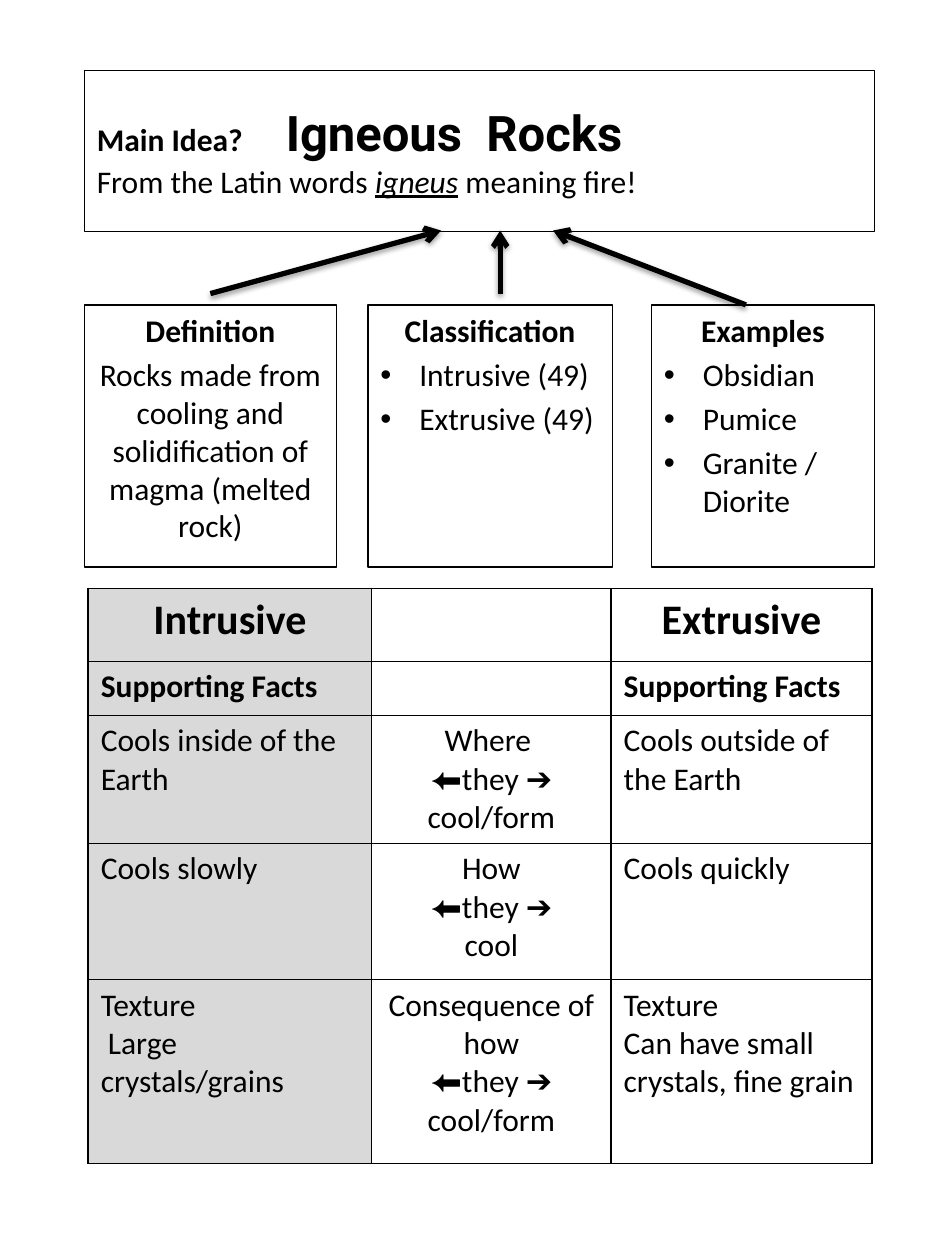
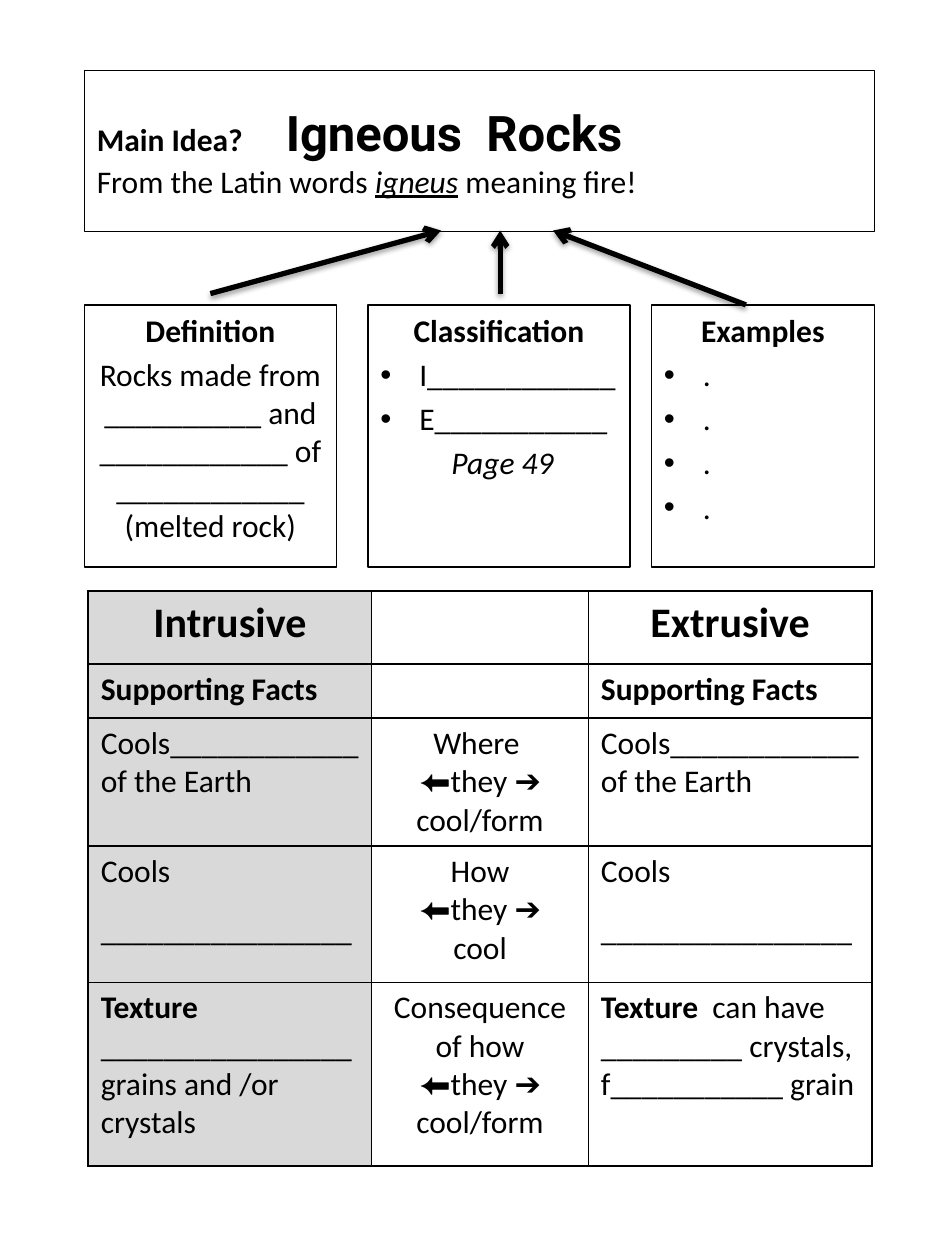
"""Build two worksheet pages about igneous rocks: the answer key and the fill-in copy."""
from lxml import etree
from pptx import Presentation
from pptx import util as u
from pptx.dml.color import RGBColor
from pptx.enum import shapes, text
from pptx.oxml import ns

PX = 9144
COLORS = {"ink": "000000", "shade": "D9D9D9"}
INK = RGBColor.from_string(COLORS["ink"])
LEFT, CENTER = text.PP_ALIGN.LEFT, text.PP_ALIGN.CENTER
STYLES = {
    "plain": {},
    "bold": {"bold": True},
    "italic": {"italic": True},
    "latin": {"italic": True, "underline": True},
    "symbol": {"name": "Arial"},
    "topic": {"name": "Roboto", "size": u.Pt(28), "bold": True},
    "heading": {"size": u.Pt(24), "bold": True},
}


def add_xml(parent, markup):
    parent.append(etree.fromstring(markup.replace(" ", f' xmlns:a="{ns.namespaces("a")["a"]}" ', 1)
                                   if " " in markup else markup))


def write(para, spans, align=LEFT, style="plain"):
    para.alignment = align
    if isinstance(spans, str):
        spans = [(spans, style)]
    for words, span_style in spans:
        if words == "\n":
            para.add_line_break()
            continue
        span = para.add_run()
        span.text = words
        span.font.name, span.font.size = "Calibri", u.Pt(18)
        span.font.bold = False
        span.font.color.rgb = INK
        for name, value in STYLES[span_style].items():
            setattr(span.font, name, value)


MAIN_IDEA = [
    ("Main Idea?\t", "bold"), ("Igneous  Rocks", "topic"), ("\n", "plain"),
    ("From the Latin words ", "plain"), ("igneus", "latin"), (" meaning fire!", "plain"),
]
ARROWS = [((167, 233), (350, 183)), ((397, 233), (397, 183)), ((592, 242), (439, 183))]
THEY = [("⬅", "symbol"), ("they ", "plain"), ("➔", "symbol")]
QUESTIONS = [["Where ", THEY, "cool/form"], ["How", THEY, "cool"],
             ["Consequence of how", THEY, "cool/form"]]
ROW_HEIGHTS = [58, 43, 100, 108, 146]
BLANK = "________________"

PAGES = [
    {
        "boxes": [
            ("Definition", 67, 200, [],
             ["Rocks made from cooling and solidification of magma (melted rock)"]),
            ("Classification", 292, 194, ["Intrusive (49)", "Extrusive (49)"], []),
            ("Examples", 517, 177, ["Obsidian", "Pumice", "Granite / Diorite"], []),
        ],
        "table_top": 467,
        "columns": [225, 190, 207],
        "intrusive": [["Cools inside of the Earth"], ["Cools slowly"],
                      ["Texture", " Large crystals/grains"]],
        "extrusive": [["Cools outside of the Earth"], ["Cools quickly"],
                      ["Texture", "Can have small crystals, fine grain"]],
    },
    {
        "boxes": [
            ("Definition", 67, 200, [],
             ["Rocks made from __________ and ____________ of ____________ (melted rock)"]),
            ("Classification", 292, 208, ["I____________", "E___________"],
             [[(" ", "plain"), ("Page 49", "italic")]]),
            ("Examples", 517, 177, ["."] * 4, []),
        ],
        "table_top": 469,
        "columns": [225, 172, 225],
        "intrusive": [["Cools____________of the Earth"], ["Cools", BLANK],
                      [[("Texture", "bold")], BLANK + "grains and /or crystals"]],
        "extrusive": [["Cools____________ of the Earth"], ["Cools", BLANK],
                      [[("Texture  ", "bold"),
                        ("can have _________ crystals, f___________ grain", "plain")]]],
    },
]

deck = Presentation()
deck.slide_width, deck.slide_height = 750 * PX, 1000 * PX
A = f'xmlns:a="{ns.qn("a:ln")[1:].split("}")[0]}"'

for content in PAGES:
    page = deck.slides.add_slide(deck.slide_layouts[6])

    frames = []
    for left, top, width, height in [(67, 56, 627, 128)] + [
            (box_left, 242, box_width, 208) for _, box_left, box_width, _, _ in content["boxes"]]:
        box = page.shapes.add_shape(shapes.MSO_SHAPE.RECTANGLE,
                                    left * PX, top * PX, width * PX, height * PX)
        box.shadow.inherit = False
        box.fill.background()
        box.line.color.rgb = INK
        box.line.width = u.Pt(0.75)
        box.text_frame.word_wrap = True
        box.text_frame.vertical_anchor = text.MSO_ANCHOR.TOP
        frames.append(box.text_frame)

    frames[0].vertical_anchor = text.MSO_ANCHOR.MIDDLE
    para = frames[0].paragraphs[0]
    para._p.get_or_add_pPr().append(etree.fromstring(
        f'<a:tabLst {A}><a:tab pos="{150 * PX}" algn="l"/></a:tabLst>'))
    write(para, MAIN_IDEA)

    for frame, (heading, _, _, bullets, centered) in zip(frames[1:], content["boxes"]):
        write(frame.paragraphs[0], heading, CENTER, "bold")
        for index, line in enumerate(bullets + centered):
            para = frame.add_paragraph()
            bulleted = index < len(bullets)
            if bulleted:
                props = para._p.get_or_add_pPr()
                props.set("marL", str(31 * PX))
                props.set("indent", str(-31 * PX))
                props.append(etree.fromstring(f'<a:buFont {A} typeface="Arial"/>'))
                props.append(etree.fromstring(f'<a:buChar {A} char="•"/>'))
            para.space_before = u.Pt(3.6)
            write(para, line, LEFT if bulleted else CENTER)

    for start, end in ARROWS:
        arrow = page.shapes.add_connector(shapes.MSO_CONNECTOR.STRAIGHT,
                                          *(value * PX for value in start + end))
        arrow.line.color.rgb = INK
        arrow.line.width = u.Pt(3)
        props = arrow._element.spPr
        props.find(ns.qn("a:ln")).append(etree.fromstring(f'<a:tailEnd {A} type="arrow"/>'))
        props.append(etree.fromstring(
            f'<a:effectLst {A}><a:outerShdw blurRad="39370" dist="20320" dir="5400000" '
            f'rotWithShape="0"><a:srgbClr val="{COLORS["ink"]}"><a:alpha val="38000"/>'
            '</a:srgbClr></a:outerShdw></a:effectLst>'))

    rows = [[["Intrusive"], [""], ["Extrusive"]],
            [["Supporting Facts"], [""], ["Supporting Facts"]],
            *zip(content["intrusive"], QUESTIONS, content["extrusive"])]
    table = page.shapes.add_table(5, 3, 70 * PX, content["table_top"] * PX,
                                  sum(content["columns"]) * PX, sum(ROW_HEIGHTS) * PX).table
    table.first_row = table.horz_banding = False
    for column, width in zip(table.columns, content["columns"]):
        column.width = width * PX
    for row, height in zip(table.rows, ROW_HEIGHTS):
        row.height = height * PX
    for row_index, row in enumerate(rows):
        style = ("heading", "bold", "plain", "plain", "plain")[row_index]
        for column_index, lines in enumerate(row):
            cell = table.cell(row_index, column_index)
            for side in "LRTB":
                cell._tc.get_or_add_tcPr().append(etree.fromstring(
                    f'<a:ln{side} {A} w="12700"><a:solidFill><a:srgbClr val="{COLORS["ink"]}"/>'
                    f'</a:solidFill></a:ln{side}>'))
            if column_index == 0:
                cell.fill.solid()
                cell.fill.fore_color.rgb = RGBColor.from_string(COLORS["shade"])
            else:
                cell.fill.background()
            align = CENTER if row_index == 0 or column_index == 1 else LEFT
            for index, line in enumerate(lines):
                frame = cell.text_frame
                para = frame.add_paragraph() if index else frame.paragraphs[0]
                if line == BLANK:
                    para.space_before = u.Pt(12)
                if line:
                    write(para, line, align, style)

deck.save("out.pptx")
